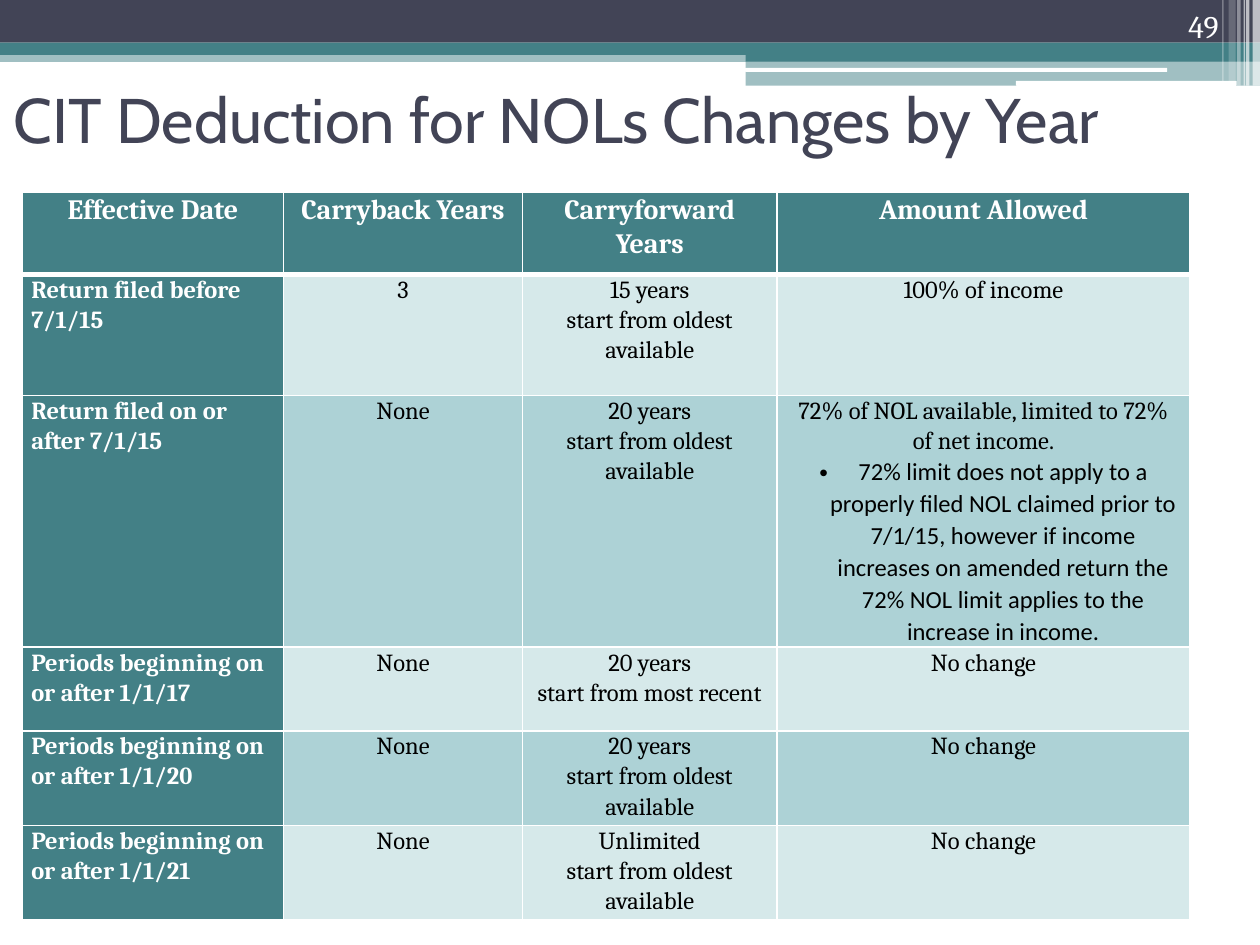
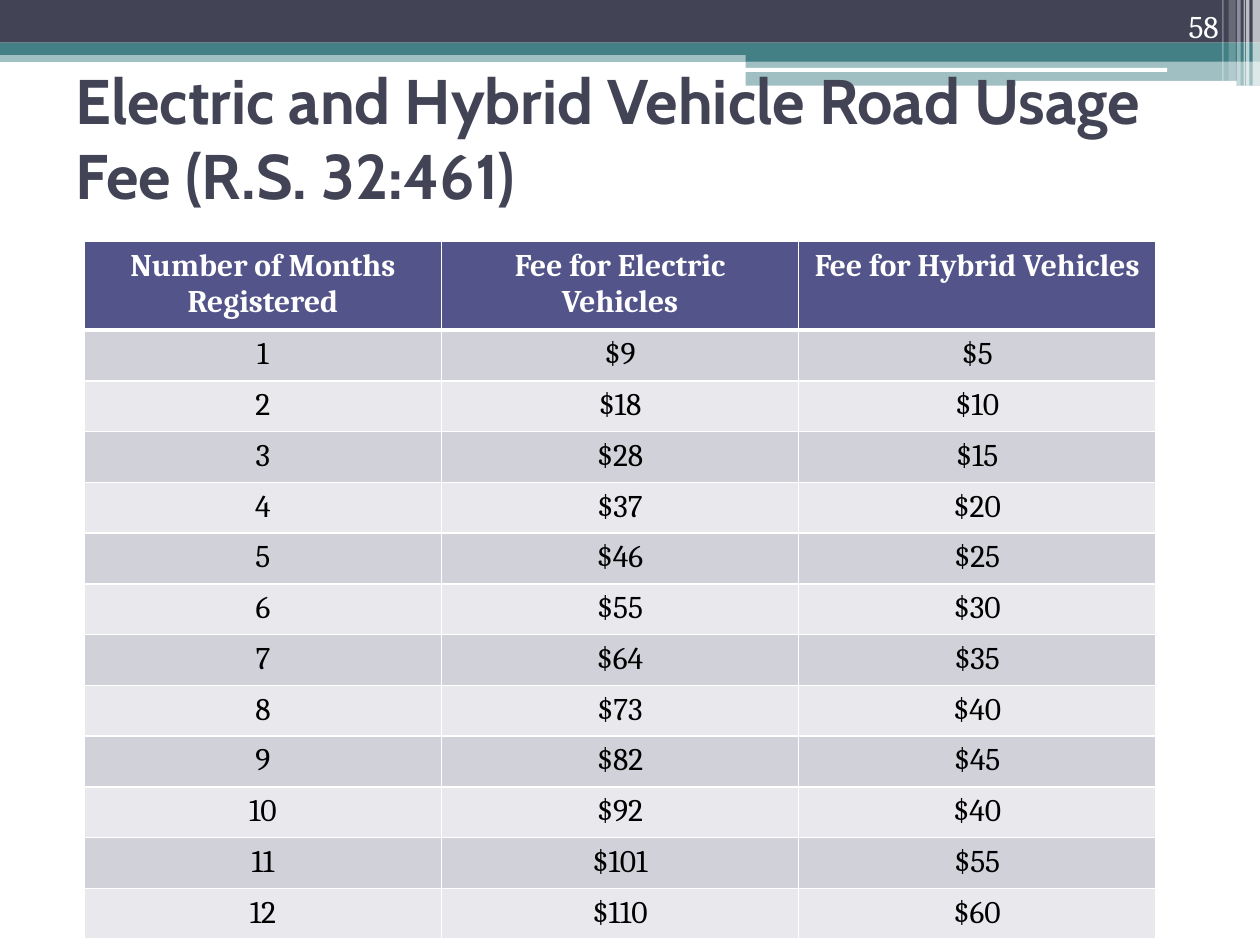
from lxml import etree
from pptx import Presentation
from pptx.dml.color import RGBColor
from pptx.enum.shapes import MSO_SHAPE
from pptx.enum.text import MSO_ANCHOR, PP_ALIGN
from pptx.oxml.ns import qn
from pptx.util import Cm, Pt

RECT, ROUND = MSO_SHAPE.RECTANGLE, MSO_SHAPE.ROUNDED_RECTANGLE
LEFT, MID, RIGHT = PP_ALIGN.LEFT, PP_ALIGN.CENTER, PP_ALIGN.RIGHT
CENTRE, BOTTOM = MSO_ANCHOR.MIDDLE, MSO_ANCHOR.BOTTOM

WHITE = RGBColor(0xFF, 0xFF, 0xFF)
BLACK = RGBColor(0, 0, 0)
SLATE = RGBColor(0x42, 0x44, 0x56)
TEAL = RGBColor(0x43, 0x80, 0x86)
MIST = RGBColor(0xD6, 0xE9, 0xEA)
AQUA = RGBColor(0xAD, 0xD2, 0xD6)
INDIGO = RGBColor(0x53, 0x54, 0x8A)
LILAC = RGBColor(0xD1, 0xD1, 0xDA)
PALE = RGBColor(0xE9, 0xE9, 0xED)

HEAD, BODY, NOTE = "Cabin", "Cambria", "Calibri"
WIDE, TALL = 25.4, 19.05
BULLET = "• "

BANDS = [
    (RECT, 0, 1.02, 25.4, 0.23, TEAL, 50),
    (RECT, 0, 0, 25.4, 0.86, SLATE, 100),
    (RECT, 0, 0.86, 25.4, 0.25, TEAL, 100),
    (RECT, 15.03, 0.99, 10.37, 0.25, TEAL, 100),
    (RECT, 15.03, 1.23, 10.37, 0.5, TEAL, 50),
    (ROUND, 15.02, 1.37, 8.51, 0.08, WHITE, 100),
    (ROUND, 20.48, 1.63, 4.45, 0.1, WHITE, 100),
]
STRIPES = [
    (25.25, 0.15, 1.73, 65),
    (25.12, 0.07, 1.73, 65),
    (25.07, 0.03, 1.73, 60),
    (24.94, 0.07, 1.73, 40),
    (24.77, 0.14, 1.63, 20),
    (24.64, 0.03, 1.63, 30),
]

OLDEST = "start from oldest available"
LOSSES = [
    ("Effective Date", "Carryback Years", "Carryforward\nYears", "Amount Allowed"),
    ("Return filed before 7/1/15", "3", "15 years\n" + OLDEST, "100% of income"),
    ("Return filed on or after 7/1/15", "None", "20 years\n" + OLDEST,
     "72% of NOL available, limited to 72% of net income.\n"
     + BULLET + "72% limit does not apply to a properly filed NOL claimed prior to "
     "7/1/15, however if income increases on amended return the 72% NOL limit "
     "applies to the increase in income."),
    ("Periods beginning on or after 1/1/17", "None",
     "20 years\nstart from most recent", "No change"),
    ("Periods beginning on or after 1/1/20", "None", "20 years\n" + OLDEST, "No change"),
    ("Periods beginning on or after 1/1/21", "None", "Unlimited\n" + OLDEST, "No change"),
]
ELECTRIC = (9, 18, 28, 37, 46, 55, 64, 73, 82, 92, 101, 110)
HYBRID = (5, 10, 15, 20, 25, 30, 35, 40, 45, 40, 55, 60)
FEES = [("Number of Months Registered", "Fee for Electric Vehicles",
         "Fee for Hybrid Vehicles")]
FEES += [(str(month), f"${cost}", f"${half}")
         for month, (cost, half) in enumerate(zip(ELECTRIC, HYBRID), 1)]

LOSS_LOOK = dict(head=TEAL, bands=(MIST, AQUA), side=True, sizes=(16, 14),
                 gap=1.07, pads=(0.18, 0))
FEE_LOOK = dict(head=INDIGO, bands=(LILAC, PALE), side=False, sizes=(18, 18),
                gap=1.0, pads=(0.25, 0.13))


def write(para, text, align, **font):
    """Put one formatted run in a paragraph."""
    para.alignment = align
    run = para.add_run()
    run.text = text
    run.font.color.rgb = font.pop("color")
    for name, value in font.items():
        setattr(run.font, name, value)


def label(slide, box, text, align, anchor, **font):
    """Add a wrapped text box."""
    frame = slide.shapes.add_textbox(*map(Cm, box)).text_frame
    frame.word_wrap = True
    frame.vertical_anchor = anchor
    write(frame.paragraphs[0], text, align, **font)


def block(slide, kind, box, color, alpha):
    """Add a flat shape of the given opacity in percent."""
    shape = slide.shapes.add_shape(kind, *map(Cm, box))
    shape.shadow.inherit = False
    shape.line.fill.background()
    shape.fill.solid()
    shape.fill.fore_color.rgb = color
    if alpha < 100:
        tint = shape.fill._xPr.find(".//" + qn("a:srgbClr"))
        etree.SubElement(tint, qn("a:alpha"), val=str(alpha * 1000))


def banner(slide, left, top):
    """Draw the top bands and the stripes at their right end."""
    for kind, x, y, width, height, color, alpha in BANDS:
        block(slide, kind, (left + x, top + y, width, height), color, alpha)
    for x, width, height, alpha in STRIPES:
        block(slide, RECT, (left + x, top, width, height), WHITE, alpha)


def frame_cell(cell, widths):
    """Rule the four sides of a cell in white."""
    props = cell._tc.get_or_add_tcPr()
    for spot, (side, width) in enumerate(widths.items()):
        line = etree.Element(qn("a:ln" + side), w=str(Pt(width)))
        fill = etree.SubElement(line, qn("a:solidFill"))
        etree.SubElement(fill, qn("a:srgbClr"), val=str(WHITE))
        props.insert(spot, line)


def fill_cell(cell, text, row, col, look):
    """Format a table cell by its place in the grid."""
    side = look["side"] and col == 0
    strong = row == 0 or side
    cell.fill.solid()
    cell.fill.fore_color.rgb = look["head"] if strong else look["bands"][(row - 1) % 2]
    across, down = map(Cm, look["pads"])
    pads = dict(margin_left=across, margin_right=across,
                margin_top=down, margin_bottom=down)
    for name, value in pads.items():
        setattr(cell, name, value)
    for spot, part in enumerate(text.split("\n")):
        para = cell.text_frame.paragraphs[0] if spot == 0 else cell.text_frame.add_paragraph()
        para.line_spacing = look["gap"]
        dotted = part.startswith(BULLET)
        write(para, part.removeprefix(BULLET), LEFT if side and row else MID,
              name=NOTE if dotted else BODY, size=Pt(look["sizes"][row > 0]),
              bold=strong, color=WHITE if strong else BLACK)
        if dotted:
            props = para._p.get_or_add_pPr()
            props.set("marL", str(Cm(0.79)))
            props.set("indent", str(-Cm(0.79)))
            etree.SubElement(props, qn("a:buFont"), typeface="Arial")
            etree.SubElement(props, qn("a:buChar"), char=BULLET.strip())
    frame_cell(cell, {"L": 1, "R": 1, "T": 3 if row == 1 else 1, "B": 3 if row == 0 else 1})


def grid(slide, left, top, rows, widths, heights, look):
    """Add a banded table with a strong header."""
    box = map(Cm, (left, top, sum(widths), sum(heights)))
    table = slide.shapes.add_table(len(rows), len(widths), *box).table
    table.first_row = table.horz_banding = False
    for col, width in zip(table.columns, widths):
        col.width = Cm(width)
    for line, height in zip(table.rows, heights):
        line.height = Cm(height)
    for row, texts in enumerate(rows):
        for col, text in enumerate(texts):
            fill_cell(table.cell(row, col), text, row, col, look)


def page(deck, title, box, bold, number):
    """Start a slide with the banner, title and number."""
    slide = deck.slides.add_slide(deck.slide_layouts[6])
    banner(slide, 0, 0)
    label(slide, box, title, LEFT, CENTRE, name=HEAD, size=Pt(36), bold=bold, color=SLATE)
    label(slide, (22.7, 0, 2.12, 1.02), number, RIGHT, BOTTOM,
          name=BODY, size=Pt(18), color=WHITE)
    return slide


def main():
    """Build and save the deck."""
    deck = Presentation()
    deck.slide_width, deck.slide_height = Cm(WIDE), Cm(TALL)
    slide = page(deck, "CIT Deduction for NOLs Changes by Year",
                 (0.03, 0.91, 23.95, 2.97), False, "49")
    grid(slide, 0.45, 3.87, LOSSES, (5.27, 4.81, 5.14, 8.32),
         (1.66, 2.44, 5.06, 1.69, 1.8, 1.8), LOSS_LOOK)
    slide = page(deck, "Electric and Hybrid Vehicle Road Usage Fee (R.S. 32:461)",
                 (1.27, 1.27, 22.86, 2.97), True, "58")
    grid(slide, 1.7, 4.87, FEES, [7.2] * 3, [1.71] + [0.99] * 12, FEE_LOOK)
    deck.save("out.pptx")


if __name__ == "__main__":
    main()
